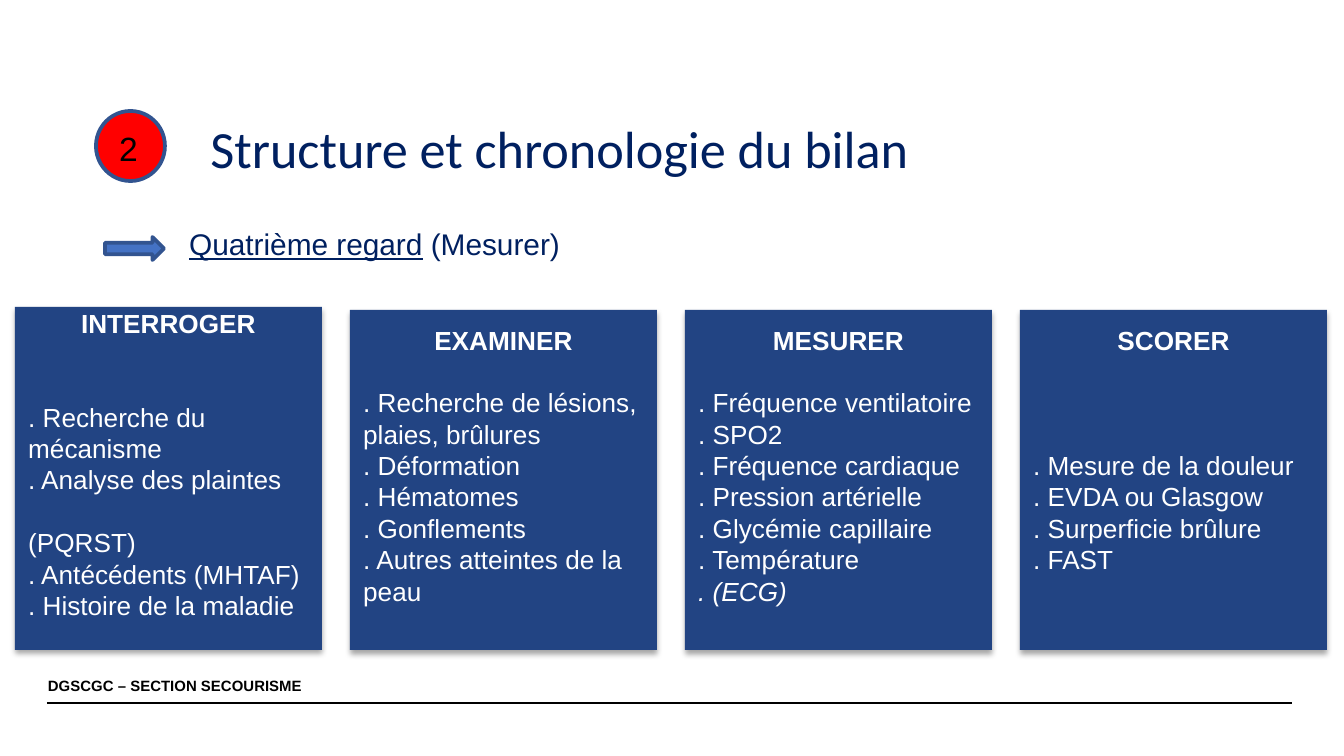
from lxml import etree
from pptx import Presentation
from pptx.dml.color import RGBColor
from pptx.enum.shapes import MSO_CONNECTOR, MSO_SHAPE
from pptx.enum.text import MSO_ANCHOR, MSO_AUTO_SIZE, PP_ALIGN
from pptx.oxml.ns import qn
from pptx.util import Pt

EMU_PER_PX = 914400 / 134.4
NAVY = RGBColor(0x00, 0x20, 0x60)
CARD_BLUE = RGBColor(0x22, 0x44, 0x83)
ARROW_BLUE = RGBColor(0x44, 0x72, 0xC4)
OUTLINE_BLUE = RGBColor(0x32, 0x54, 0x90)
RED = RGBColor(0xFF, 0x00, 0x00)
BLACK = RGBColor(0x00, 0x00, 0x00)
WHITE = RGBColor(0xFF, 0xFF, 0xFF)

RECTANGLE, OVAL, RIGHT_ARROW = MSO_SHAPE.RECTANGLE, MSO_SHAPE.OVAL, MSO_SHAPE.RIGHT_ARROW
STRAIGHT = MSO_CONNECTOR.STRAIGHT
TOP, MIDDLE, BOTTOM = MSO_ANCHOR.TOP, MSO_ANCHOR.MIDDLE, MSO_ANCHOR.BOTTOM
LEFT, CENTER = PP_ALIGN.LEFT, PP_ALIGN.CENTER
NO_FIT, GROW = MSO_AUTO_SIZE.NONE, MSO_AUTO_SIZE.SHAPE_TO_FIT_TEXT

CARD_LINE = 16.8
CARD_LEFT, CARD_STEP, CARD_WIDTH, CARD_BOTTOM = 15, 335, 307, 650
# Each card: heading, top, top inset, then (line, empty lines above it).
CARDS = [
    ("INTERROGER", 307, 0, [
        (". Recherche du mécanisme", 2), (". Analyse des plaintes", 0), ("(PQRST)", 1),
        (". Antécédents (MHTAF)", 0), (". Histoire de la maladie", 0)]),
    ("EXAMINER", 310, 14, [
        (". Recherche de lésions, plaies, brûlures", 1), (". Déformation", 0),
        (". Hématomes", 0), (". Gonflements", 0), (". Autres atteintes de la peau", 0)]),
    ("MESURER", 310, 14, [
        (". Fréquence ventilatoire", 1), (". SPO2", 0), (". Fréquence cardiaque", 0),
        (". Pression artérielle", 0), (". Glycémie capillaire", 0),
        (". Température", 0), (". (ECG)", 0)]),
    ("SCORER", 310, 14, [
        (". Mesure de la douleur", 3), (". EVDA ou Glasgow", 0),
        (". Surperficie brûlure", 0), (". FAST", 0)]),
]


def px(length):
    return round(length * EMU_PER_PX)


class BilanSlide:
    """Holds the presentation, its current slide and the text style."""

    def __init__(self, width, height):
        self.deck = Presentation()
        self.deck.slide_width, self.deck.slide_height = px(width), px(height)
        self.slide = self.deck.slides.add_slide(self.deck.slide_layouts[5])
        self.shapes = self.slide.shapes

    def style(self, paragraph, size, color, bold=False, italic=False, name="Arial", align=LEFT):
        paragraph.alignment = align
        font = paragraph.font
        font.name, font.size, font.bold, font.italic = name, Pt(size), bold, italic
        font.color.rgb = color

    def title(self, text, *box):
        heading = self.shapes.title
        heading.left, heading.top, heading.width, heading.height = map(px, box)
        frame = heading.text_frame
        frame.text = text
        frame.auto_size, frame.vertical_anchor = NO_FIT, BOTTOM
        frame.paragraphs[0].line_spacing = 0.9
        self.style(frame.paragraphs[0], 28, NAVY, name="Calibri")

    def shape(self, kind, box, fill, outline=None):
        shape = self.shapes.add_shape(kind, *map(px, box))
        shape.shadow.inherit = False
        shape.fill.solid()
        shape.fill.fore_color.rgb = fill
        if outline is None:
            shape.line.fill.background()
        else:
            shape.line.color.rgb, shape.line.width = outline, Pt(2)
        return shape

    def badge(self, number, *box):
        frame = self.shape(OVAL, box, RED, OUTLINE_BLUE).text_frame
        frame.text, frame.vertical_anchor = number, TOP
        self.style(frame.paragraphs[0], 18, BLACK)

    def text(self, runs, box, size, color, bold=False):
        frame = self.shapes.add_textbox(*map(px, box)).text_frame
        frame.word_wrap = True
        for words, underlined in runs:
            run = frame.paragraphs[0].add_run()
            run.text = words
            if underlined:
                run.font.underline = True
        self.style(frame.paragraphs[0], size, color, bold)
        return frame

    def footer(self, words, *box):
        frame = self.text([(words, False)], box, 8, BLACK, bold=True)
        frame.margin_left = frame.margin_right = frame.margin_top = frame.margin_bottom = 0
        frame.vertical_anchor = MIDDLE

    def soft_shadow(self, shape):
        effects = shape._element.spPr.find(qn("a:effectLst"))
        shadow = etree.SubElement(effects, qn("a:outerShdw"), blurRad=str(Pt(3.1)),
                                  dist=str(Pt(1.8)), dir="5400000", rotWithShape="0")
        black = etree.SubElement(shadow, qn("a:srgbClr"), val="000000")
        etree.SubElement(black, qn("a:alpha"), val="35000")

    def card(self, left, heading, top, inset, lines):
        card = self.shape(RECTANGLE, (left, top, CARD_WIDTH, CARD_BOTTOM - top), CARD_BLUE)
        self.soft_shadow(card)
        frame = card.text_frame
        frame.text, frame.vertical_anchor = heading, TOP
        frame.margin_top, frame.margin_bottom = px(inset), 0
        self.style(frame.paragraphs[0], 14, WHITE, bold=True, align=CENTER)
        for line, gap in lines:
            item = frame.add_paragraph()
            item.text = line
            if gap:
                item.space_before = Pt(round(gap * CARD_LINE, 1))
            self.style(item, 14, WHITE, italic=line == ". (ECG)")

    def rule(self, start, end, y):
        rule = self.shapes.add_connector(STRAIGHT, px(start), px(y), px(end), px(y))
        rule.line.color.rgb, rule.line.width = BLACK, Pt(0.79)
        etree.SubElement(rule._element.spPr, qn("a:effectLst"))


def main():
    page = BilanSlide(1344, 756)
    for start, end in ((47, 1286), (52, 1292)):
        page.rule(start, end, 703)
    for index, card in enumerate(CARDS):
        page.card(CARD_LEFT + index * CARD_STEP, *card)
    page.title("Structure et chronologie du bilan", 197, 98, 1129, 89)
    page.badge("2", 96, 111, 69, 70)
    subtitle = page.text([("Quatrième regard", True), (" (Mesurer)", False)],
                         (176, 219, 692, 50), 16, NAVY)
    subtitle.auto_size = GROW
    page.shape(RIGHT_ARROW, (105, 237, 59, 23), ARROW_BLUE, OUTLINE_BLUE)
    page.footer("DGSCGC – SECTION SECOURISME", 48, 675, 601, 21)
    page.deck.save("out.pptx")


if __name__ == "__main__":
    main()
